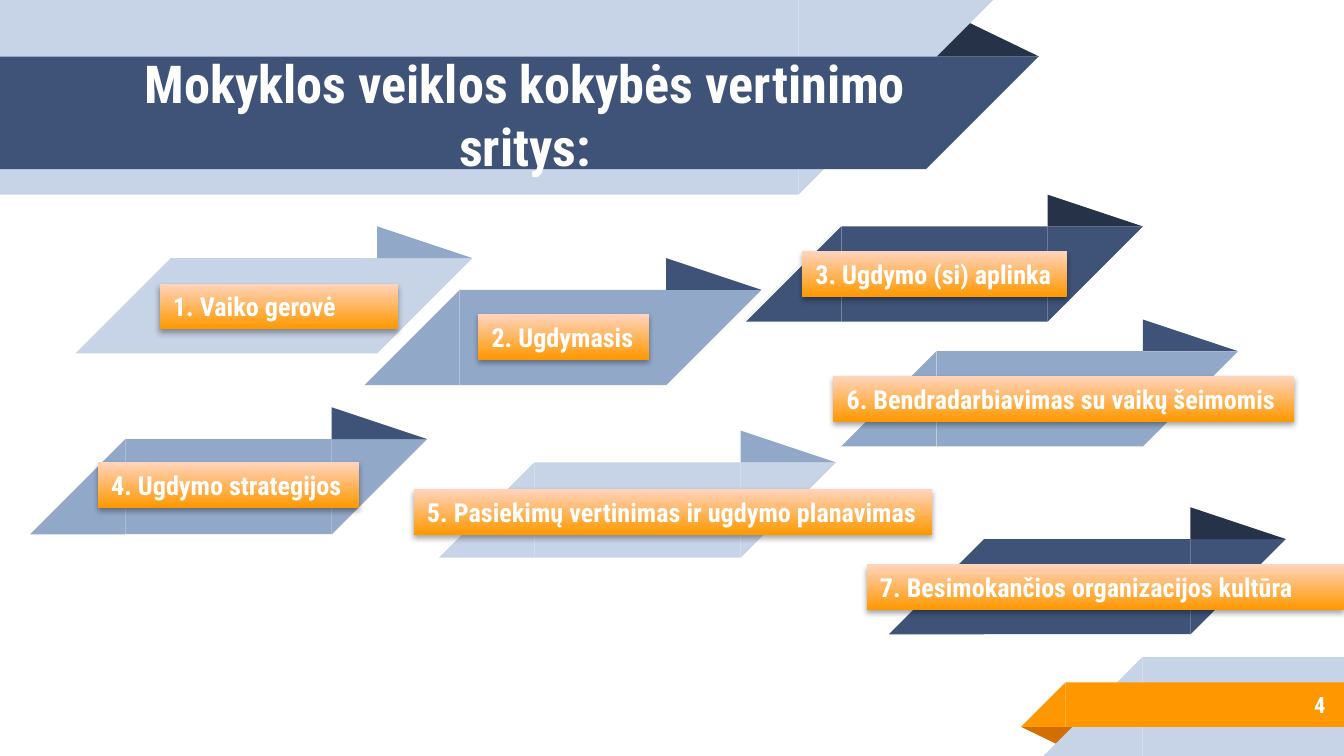
from lxml import etree
from pptx import Presentation
from pptx.dml.color import RGBColor
from pptx.enum.shapes import MSO_SHAPE
from pptx.enum.text import MSO_ANCHOR, MSO_AUTO_SIZE, PP_ALIGN
from pptx.oxml.ns import qn
from pptx.util import Cm, Pt

RECT = MSO_SHAPE.RECTANGLE
CORNER = MSO_SHAPE.RIGHT_TRIANGLE
TRIANGLE = MSO_SHAPE.ISOSCELES_TRIANGLE
LEFT, CENTER, RIGHT = PP_ALIGN.LEFT, PP_ALIGN.CENTER, PP_ALIGN.RIGHT
MIDDLE = MSO_ANCHOR.MIDDLE
NO_FIT, GROW = MSO_AUTO_SIZE.NONE, MSO_AUTO_SIZE.SHAPE_TO_FIT_TEXT

FONT = "Roboto Condensed"
COLORS = {
    "white": "FFFFFF", "pale": "C7D3E6", "mid": "92A8C8", "deep": "3F5378",
    "dark": "263248", "orange": "FF9800", "rust": "D26F00", "peach": "FFD4BD",
}
# Fold colour that goes with each ribbon colour
FOLDS = {"pale": "mid", "mid": "deep", "deep": "dark"}

BODY_W, BODY_H, FOLD_H = 3.9, 1.8, 0.6
LABEL_H = 0.86

# Ribbon left, top, colour; label text, left, top, width, wrap
AREAS = [
    (1.43, 4.88, "pale", "1. Vaiko gerovė", 3.02, 5.36, 4.5, True),
    (6.89, 5.48, "mid", "2. Ugdymasis", 9.04, 5.94, 3.23, False),
    (14.1, 4.28, "deep", "3. Ugdymo (si) aplinka", 15.16, 4.75, 5, False),
    (0.57, 8.3, "mid", "4. Ugdymo strategijos", 1.85, 8.74, 4.93, False),
    (8.3, 8.74, "pale", "5. Pasiekimų vertinimas ir ugdymo planavimas",
     7.82, 9.25, 9.8, True),
    (15.9, 6.64, "mid", "6. Bendradarbiavimas su vaikų šeimomis",
     15.75, 7.11, 8.71, False),
    (16.8, 10.19, "deep", "7. Besimokančios organizacijos kultūra",
     16.38, 10.67, 9.02, True),
]


def rgb(name):
    return RGBColor.from_string(COLORS[name])


class Deck:
    """Holds the current slide and the style of its elements."""

    def __init__(self, s):
        self.s = s

    def group(self):
        return self.s.shapes.add_group_shape().shapes

    def shape(self, shapes, kind, box, color):
        sp = shapes.add_shape(kind, *map(Cm, box))
        sp.shadow.inherit = False
        sp.fill.solid()
        sp.fill.fore_color.rgb = rgb(color)
        sp.line.fill.background()
        return sp

    def corner(self, shapes, x, y, size, color, turn):
        """Mirrored right triangle: turn 0 slants a left end, 180 a right end."""
        sp = self.shape(shapes, CORNER, (x, y, size, size), color)
        sp.element.spPr.find(qn("a:xfrm")).set("flipH", "1")
        sp.rotation = turn

    def fold(self, shapes, box, color, apex, turn=0):
        sp = self.shape(shapes, TRIANGLE, box, color)
        sp.adjustments[0] = apex
        sp.rotation = turn

    def band(self, shapes, x, y, w, h, color, left=False, right=False):
        """Rectangle with slanted ends added outside its width."""
        self.shape(shapes, RECT, (x, y, w, h), color)
        if left:
            self.corner(shapes, x - h, y, h, color, 0)
        if right:
            self.corner(shapes, x + w, y, h, color, 180)

    def ribbon(self, x, y, color):
        shapes = self.group()
        body_x = x + BODY_H
        self.band(shapes, body_x, y, BODY_W, BODY_H, color, True, True)
        box = (body_x + BODY_W, y - FOLD_H, BODY_H, FOLD_H)
        self.fold(shapes, box, FOLDS[color], 0)

    def set_text(self, tf, text, size, align):
        tf.text = text
        p = tf.paragraphs[0]
        p.alignment = align
        p.font.name, p.font.size, p.font.bold = FONT, Pt(size), True
        p.font.color.rgb = rgb("white")

    def middle(self, tf):
        tf.word_wrap = True
        tf.auto_size = NO_FIT
        tf.vertical_anchor = MIDDLE
        tf.margin_left = tf.margin_right = Cm(0.25)
        tf.margin_top = tf.margin_bottom = Cm(0.25)

    def title(self, text, x, y, w, h):
        sp = self.s.shapes.title
        sp.left, sp.top, sp.width, sp.height = map(Cm, (x, y, w, h))
        sp.element.getparent().append(sp.element)  # in front of the banner
        self.set_text(sp.text_frame, text, 28, CENTER)
        self.middle(sp.text_frame)

    def page_number(self, text, x, y, w, h):
        tf = self.s.shapes.add_textbox(*map(Cm, (x, y, w, h))).text_frame
        self.set_text(tf, text, 12, RIGHT)
        self.middle(tf)

    def label(self, text, x, y, w, wrap):
        sp = self.shape(self.s.shapes, RECT, (x, y, w, LABEL_H), "orange")
        sp.fill.gradient()
        sp.fill.gradient_angle = 90
        for stop, color in zip(sp.fill.gradient_stops, ("orange", "peach")):
            stop.color.rgb = rgb(color)
        self.soft_shadow(sp)
        self.set_text(sp.text_frame, text, 14, LEFT)
        sp.text_frame.word_wrap = wrap
        sp.text_frame.auto_size = GROW

    def soft_shadow(self, sp):
        effects = sp.element.spPr.find(qn("a:effectLst"))
        shadow = etree.SubElement(
            effects, qn("a:outerShdw"), blurRad=str(Pt(3.1)),
            dist=str(Pt(1.8)), dir="5400000", rotWithShape="0")
        color = etree.SubElement(shadow, qn("a:srgbClr"), val="000000")
        etree.SubElement(color, qn("a:alpha"), val="35000")


def main():
    prs = Presentation()
    prs.slide_width, prs.slide_height = Cm(25.4), Cm(14.29)
    deck = Deck(prs.slides.add_slide(prs.slide_layouts[5]))

    banner = deck.group()
    deck.fold(banner, (17.48, 0.36, 2.16, 0.71), "dark", 0.32)
    deck.band(banner, 0, 0, 15.09, 3.68, "pale", right=True)
    deck.band(banner, 0, 1.07, 17.5, 2.13, "deep", right=True)

    footer = deck.group()
    deck.fold(footer, (19.3, 13.74, 1.09, 0.36), "rust", 0.32, 180)
    deck.band(footer, 21.59, 12.42, 3.81, 1.87, "pale", left=True)
    deck.band(footer, 20.14, 12.9, 5.26, 0.84, "orange", left=True)

    deck.title("Mokyklos veiklos kokybės vertinimo sritys:",
               2.26, 1.09, 15.32, 2.13)
    deck.page_number("4", 21.16, 12.88, 4.14, 0.89)

    for x, y, color, *_ in AREAS:
        deck.ribbon(x, y, color)
    for _, _, _, *label in AREAS:
        deck.label(*label)

    prs.save("out.pptx")


if __name__ == "__main__":
    main()
